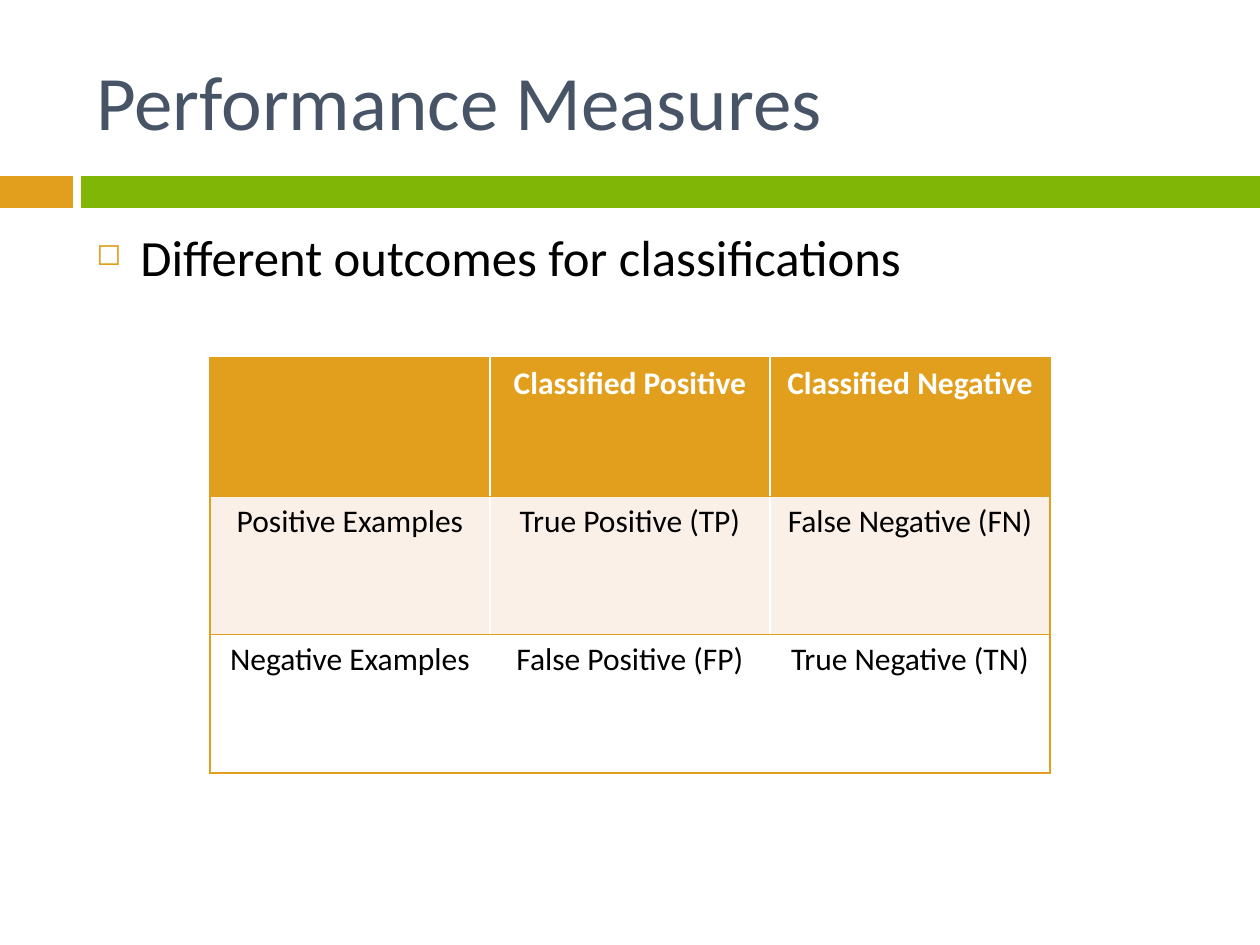
import pptx
import pptx.util
import pptx.dml.color
import pptx.enum.shapes
import pptx.enum.text
import pptx.oxml
import pptx.oxml.ns
from lxml import etree

# Content
TITLE = "Performance Measures"
BULLET = "Different outcomes for classifications"
OUTCOMES = [
    ["", "Classified Positive", "Classified Negative"],
    ["Positive Examples", "True Positive (TP)", "False Negative (FN)"],
    ["Negative Examples", "False Positive (FP)", "True Negative (TN)"],
]

# Theme and layout, lengths in px
THEME = {
    "font": "Calibri", "orange": "E29F1D", "green": "80B606",
    "title": "465466", "text": "000000", "white": "FFFFFF", "band": "FAF0E8",
    "title_pt": 44, "bullet_pt": 29, "cell_pt": 18,
}
PX = 914400 // 126
WIDTH, HEIGHT = 1260, 945
BARS = [((0, 176, 73, 32), "orange"), ((81, 176, WIDTH - 81, 32), "green")]
TITLE_BOX = (84, 32, 1124, 136)
BODY_BOX = (84, 220, 1124, 620)
TABLE_BOX = (210, 358, 840, 415)
INDENT = 44


def emu(box):
    return [v * PX for v in box]


def color(name):
    return pptx.dml.color.RGBColor.from_string(THEME[name])


def add_run(p, text, size, ink, bold=False):
    r = p.add_run()
    r.text = text
    r.font.name = THEME["font"]
    r.font.size = pptx.util.Pt(THEME[size])
    r.font.bold = bold
    r.font.color.rgb = color(ink)


def add_text(s, box, anchor):
    tf = s.shapes.add_textbox(*emu(box)).text_frame
    tf.word_wrap = True
    tf.vertical_anchor = anchor
    return tf.paragraphs[0]


def add_bullet(p):
    pPr = p._p.get_or_add_pPr()
    pPr.set("marL", str(INDENT * PX))
    pPr.set("indent", str(-INDENT * PX))
    clr = etree.SubElement(pPr, pptx.oxml.ns.qn("a:buClr"))
    etree.SubElement(clr, pptx.oxml.ns.qn("a:srgbClr"), val=THEME["orange"])
    etree.SubElement(pPr, pptx.oxml.ns.qn("a:buSzPct"), val="60000")
    etree.SubElement(pPr, pptx.oxml.ns.qn("a:buChar"), char="◻")


def set_borders(cell, sides):
    tcPr = cell._tc.get_or_add_tcPr()
    for i, side in enumerate(sides):
        tcPr.insert(i, pptx.oxml.parse_xml(
            f'<a:ln{side} {pptx.oxml.ns.nsdecls("a")} w="12700"><a:solidFill>'
            f'<a:srgbClr val="{THEME["orange"]}"/></a:solidFill></a:ln{side}>'))


def add_outcomes(s):
    rows, cols = len(OUTCOMES), len(OUTCOMES[0])
    table = s.shapes.add_table(rows, cols, *emu(TABLE_BOX)).table
    fills = ["orange", "band", "white"]
    for i, row in enumerate(OUTCOMES):
        for j, text in enumerate(row):
            cell = table.cell(i, j)
            cell.fill.solid()
            cell.fill.fore_color.rgb = color(fills[i])
            # Outer frame plus row rules, no inner verticals
            left = "L" if j == 0 else ""
            right = "R" if j == cols - 1 else ""
            set_borders(cell, left + right + "TB")
            if text:
                p = cell.text_frame.paragraphs[0]
                p.alignment = pptx.enum.text.PP_ALIGN.CENTER
                add_run(p, text, "cell_pt", "text" if i else "white", i == 0)


def main():
    prs = pptx.Presentation()
    prs.slide_width, prs.slide_height = emu((WIDTH, HEIGHT))
    s = prs.slides.add_slide(prs.slide_layouts[6])

    # Divider bars
    for box, fill in BARS:
        sp = s.shapes.add_shape(pptx.enum.shapes.MSO_SHAPE.RECTANGLE, *emu(box))
        sp.shadow.inherit = False
        sp.fill.solid()
        sp.fill.fore_color.rgb = color(fill)
        sp.line.fill.background()

    # Title and bullet
    p = add_text(s, TITLE_BOX, pptx.enum.text.MSO_ANCHOR.MIDDLE)
    add_run(p, TITLE, "title_pt", "title")
    p = add_text(s, BODY_BOX, pptx.enum.text.MSO_ANCHOR.TOP)
    p.space_before = pptx.util.Pt(7)
    add_bullet(p)
    add_run(p, BULLET, "bullet_pt", "text")

    # Outcome table
    add_outcomes(s)
    prs.save("out.pptx")


if __name__ == "__main__":
    main()
